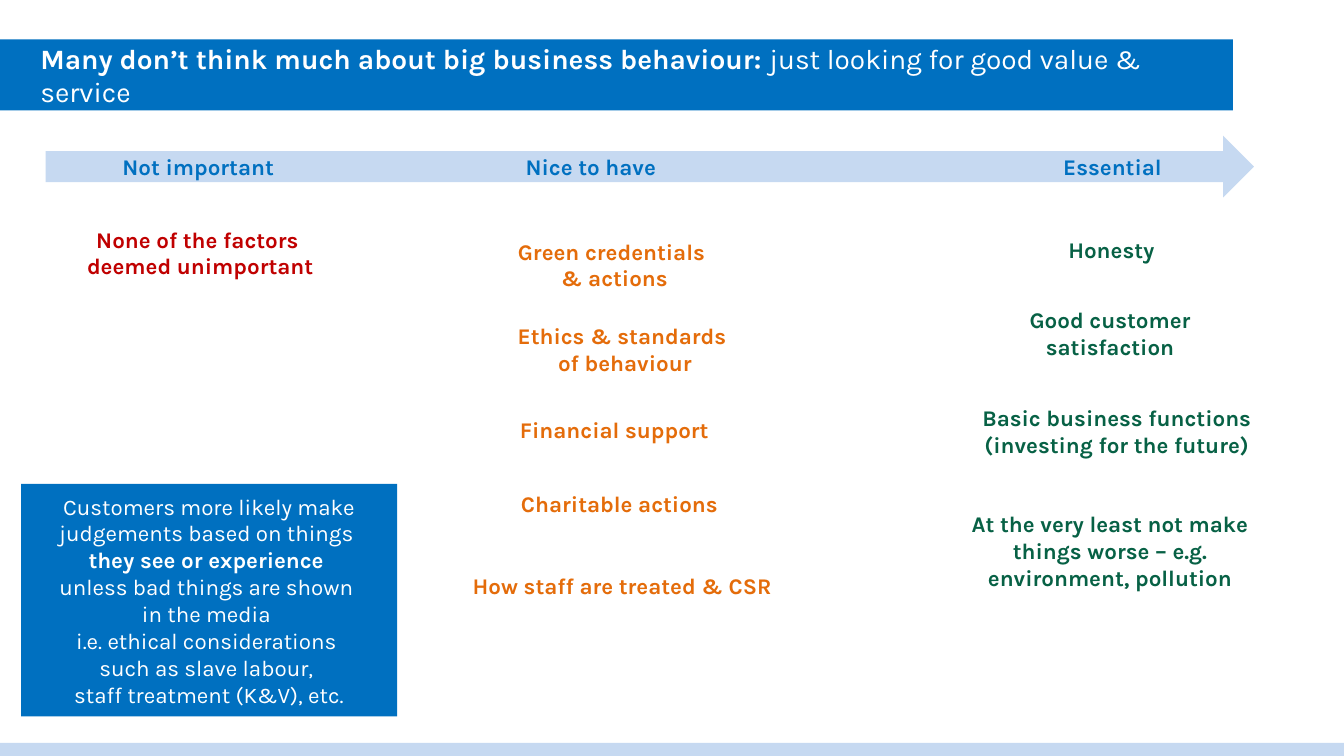
from lxml import etree
from pptx import Presentation
from pptx.dml.color import RGBColor
from pptx.enum.shapes import MSO_SHAPE as Shape
from pptx.enum.text import MSO_ANCHOR as Anchor, MSO_AUTO_SIZE as AutoSize, PP_ALIGN as Align
from pptx.oxml.ns import qn
from pptx.util import Pt

FONT = "Karla"
BLUE, PALE, WHITE = "0070C0", "C6D9F1", "FFFFFF"
RED, ORANGE, GREEN = "C00000", "E46C0A", "076145"


def rgb(value):
    return RGBColor.from_string(value)


def points(box):
    return [Pt(value) for value in box]


def style(span, size, color, bold=False):
    span.font.name = FONT
    span.font.size = Pt(size)
    span.font.bold = bold
    span.font.color.rgb = rgb(color)


def fill_text(frame, lines, color, bold_lines):
    """Write centred 12 pt paragraphs; bold_lines holds the indexes of bold ones."""
    frame.word_wrap = True
    frame.text = "\n".join(lines)
    for index, para in enumerate(frame.paragraphs):
        para.alignment = Align.CENTER
        for span in para.runs:
            style(span, 12, color, index in bold_lines)


def add_block(page, kind, box, color):
    block = page.shapes.add_shape(kind, *points(box))
    block.shadow.inherit = False
    block.fill.solid()
    block.fill.fore_color.rgb = rgb(color)
    block.line.fill.background()
    block.text_frame.vertical_anchor = Anchor.MIDDLE
    return block


def add_title(page, box, strong, light):
    title = page.shapes.title
    title.left, title.top, title.width, title.height = points(box)
    title.fill.solid()
    title.fill.fore_color.rgb = rgb(BLUE)
    frame = title.text_frame
    frame.auto_size = AutoSize.NONE
    frame.word_wrap = True
    frame.vertical_anchor = Anchor.MIDDLE
    para = frame.paragraphs[0]
    para.alignment = Align.LEFT
    props = para._p.get_or_add_pPr()
    props.set("marL", str(Pt(14.4)))
    props.set("indent", "0")
    for text, bold in ((strong, True), (light, False)):
        span = para.add_run()
        span.text = text
        style(span, 15, WHITE, bold)


def add_scale(page, box, labels, stops):
    """Arrow whose labels after the first start at the given tab stops."""
    arrow = add_block(page, Shape.RIGHT_ARROW, box, PALE)
    fill_text(arrow.text_frame, ["\t".join(labels)], BLUE, {0})
    props = arrow.text_frame.paragraphs[0]._p.get_or_add_pPr()
    tabs = etree.SubElement(props, qn("a:tabLst"))
    for stop in stops:
        etree.SubElement(tabs, qn("a:tab"), pos=str(Pt(stop)), algn="l")


def add_column(page, left, top, color, factors):
    """Factors are (x offset, y offset, width, lines, line count as drawn)."""
    for x, y, width, lines, count in factors:
        box = (left + x, top + y, width, 7.2 + 14.4 * count)
        label = page.shapes.add_textbox(*points(box))
        fill_text(label.text_frame, lines, color, range(len(lines)))
        label.text_frame.auto_size = AutoSize.SHAPE_TO_FIT_TEXT


def add_callout(page, box, lines, bold_lines):
    callout = add_block(page, Shape.RECTANGLE, box, BLUE)
    fill_text(callout.text_frame, lines, WHITE, bold_lines)


def main():
    deck = Presentation()
    deck.slide_width, deck.slide_height = Pt(720), Pt(405)
    page = deck.slides.add_slide(deck.slide_layouts[5])

    add_block(page, Shape.RECTANGLE, (0, 398, 720, 7), PALE)
    add_title(page, (0, 21.1, 660.5, 38),
              "Many don’t think much about big business behaviour: ",
              "just looking for good value & service")
    add_scale(page, (24.5, 72.7, 647.3, 33.1),
              ["Not important", "Nice to have", "Essential"], (216, 504))

    add_column(page, 512.6, 123.1, GREEN, [
        (37.5, 0, 90.7, ["Honesty"], 1),
        (0, 37.5, 164.2, ["Good customer satisfaction"], 2),
        (3.6, 90, 164.2, ["Basic business functions (investing for the future)"], 2),
        (0, 146.9, 164.2, ["At the very least not make things worse – e.g. "
                           "environment, pollution"], 3),
    ])
    add_column(page, 25.2, 117.4, RED, [
        (0, 0, 164.2, ["None of the factors ", "deemed unimportant"], 2),
    ])
    add_column(page, 238.3, 123.8, ORANGE, [
        (8.7, 0, 164.2, ["Green credentials ", "& actions"], 2),
        (2.9, 45.4, 187.2, ["Ethics & standards ", "of behaviour"], 2),
        (8.7, 95.8, 164.2, ["Financial support"], 1),
        (0, 135.4, 187.2, ["Charitable actions"], 1),
        (1.5, 179.3, 187.2, ["How staff are treated & CSR"], 1),
    ])
    add_callout(page, (11.3, 259.3, 201.4, 124.5), [
        "Customers more likely make judgements based on things ",
        "they see or experience ",
        "unless bad things are shown ",
        "in the media ",
        "i.e. ethical considerations ",
        "such as slave labour, ",
        "staff treatment (K&V), etc.",
    ], {1})

    deck.save("out.pptx")


if __name__ == "__main__":
    main()
